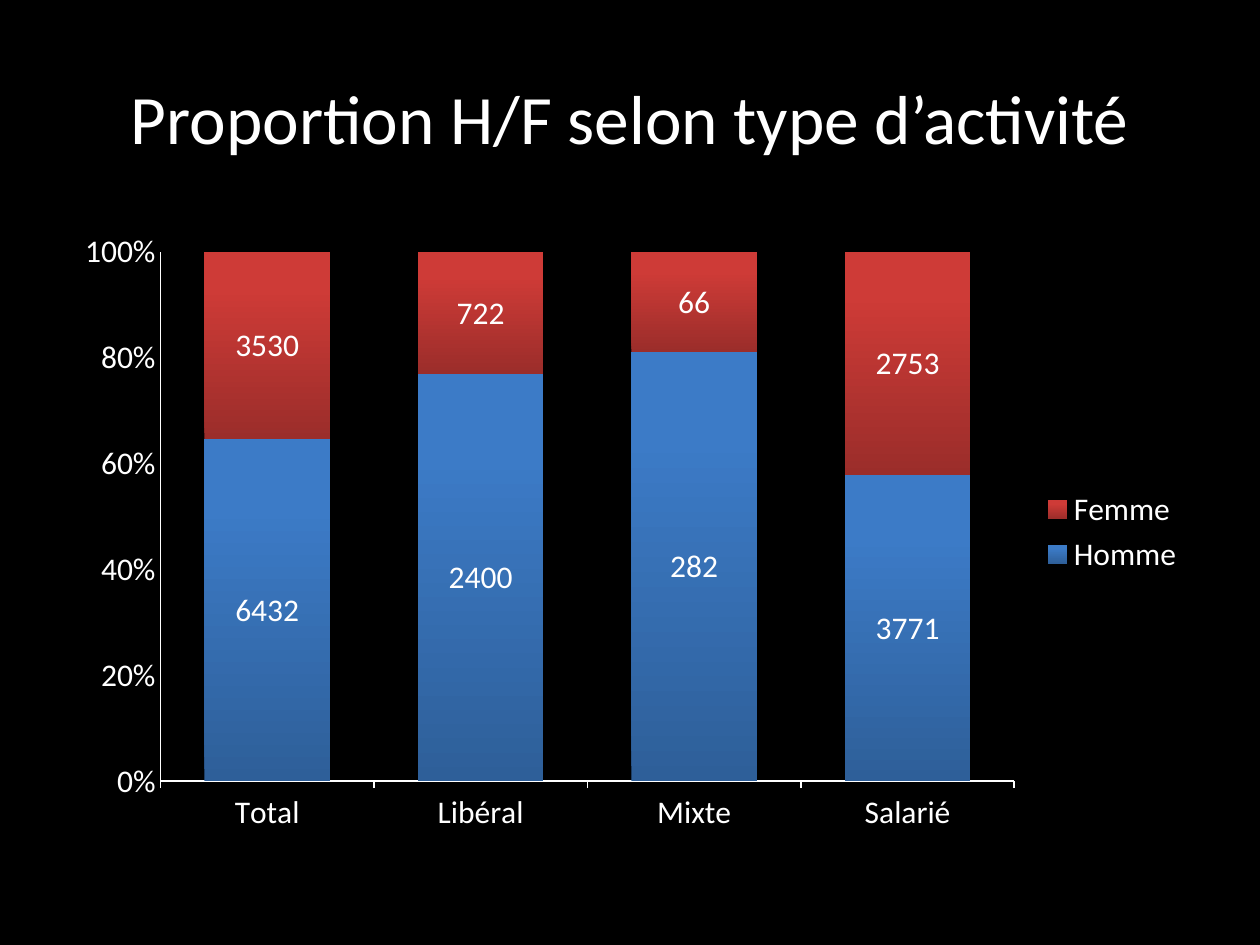
from lxml import etree
from pptx import Presentation
from pptx import util as u
from pptx.chart.data import CategoryChartData
from pptx.dml.color import RGBColor
from pptx.enum import chart as c, text
from pptx.oxml.ns import qn

# Content
TITLE = "Proportion H/F selon type d’activité"
CATEGORIES = ["Total", "Libéral", "Mixte", "Salarié"]
SERIES = [  # name, values, gradient from bottom to top
    ("Homme", (6432, 2400, 282, 3771), ("2E5F99", "3C7BC7")),
    ("Femme", (3530, 722, 66, 2753), ("9B2D2A", "CE3B37")),
]
FONT, WHITE, BLACK = "Calibri", "FFFFFF", "000000"

# Layout in px: left, top, width, height
SLIDE_SIZE = (1260, 945)
TITLE_BOX = (63, 38, 1134, 158)
CHART_BOX = (63, 220, 1134, 624)
PLOT_BOX = (161, 252, 854, 529)
PX_PER_INCH = 126


def px(length):
    return u.Inches(length / PX_PER_INCH)


def color(value):
    return RGBColor.from_string(value)


def set_values(target, **values):
    for name, value in values.items():
        setattr(target, name, value)


def style_font(font, size):
    set_values(font, name=FONT, size=u.Pt(size))
    font.color.rgb = color(WHITE)


def place_plot(chart):
    """Fix the inner plot area as fractions of the chart frame."""
    left, top, width, height = CHART_BOX
    x, y, w, h = PLOT_BOX
    values = {
        "layoutTarget": "inner", "xMode": "edge", "yMode": "edge",
        "x": round((x - left) / width, 3), "y": round((y - top) / height, 3),
        "w": round(w / width, 3), "h": round(h / height, 3),
    }
    plot_area = chart.plots[0]._element.getparent()
    for old in plot_area.findall(qn("c:layout")):
        plot_area.remove(old)
    layout = etree.Element(qn("c:layout"))
    manual = etree.SubElement(layout, qn("c:manualLayout"))
    for name, value in values.items():
        etree.SubElement(manual, qn("c:" + name)).set("val", str(value))
    plot_area.insert(0, layout)


def add_title(slide):
    frame = slide.shapes.add_textbox(*map(px, TITLE_BOX)).text_frame
    set_values(frame, word_wrap=True, vertical_anchor=text.MSO_ANCHOR.MIDDLE)
    paragraph = frame.paragraphs[0]
    set_values(paragraph, text=TITLE, alignment=text.PP_ALIGN.CENTER)
    style_font(paragraph.runs[0].font, 39.6)


def add_activity_chart(slide):
    data = CategoryChartData()
    data.categories = CATEGORIES
    for name, values, _ in SERIES:
        data.add_series(name, values)
    chart = slide.shapes.add_chart(
        c.XL_CHART_TYPE.COLUMN_STACKED_100, *map(px, CHART_BOX), data).chart
    set_values(chart, has_title=False, has_legend=True)
    style_font(chart.font, 18)
    set_values(chart.legend, include_in_layout=False,
               position=c.XL_LEGEND_POSITION.RIGHT)
    place_plot(chart)

    # Columns
    plot = chart.plots[0]
    set_values(plot, gap_width=70, overlap=100, vary_by_categories=False)
    for series, (_, _, gradient) in zip(plot.series, SERIES):
        fill = series.format.fill
        fill.gradient()
        fill.gradient_angle = 90
        for stop, value, position in zip(fill.gradient_stops, gradient, (0, 0.8)):
            stop.color.rgb = color(value)
            stop.position = position
        set_values(series.data_labels, show_value=True,
                   position=c.XL_LABEL_POSITION.CENTER)
        style_font(series.data_labels.font, 18)

    # Axes
    set_values(chart.value_axis, major_unit=0.2, minimum_scale=0, maximum_scale=1,
               has_major_gridlines=False, major_tick_mark=c.XL_TICK_MARK.NONE)
    set_values(chart.value_axis.tick_labels, number_format="0%",
               number_format_is_linked=False)
    chart.category_axis.major_tick_mark = c.XL_TICK_MARK.OUTSIDE
    for axis in (chart.category_axis, chart.value_axis):
        axis.format.line.color.rgb = color(WHITE)
        axis.format.line.width = u.Pt(1)


def main():
    presentation = Presentation()
    width, height = map(px, SLIDE_SIZE)
    set_values(presentation, slide_width=width, slide_height=height)
    slide = presentation.slides.add_slide(presentation.slide_layouts[6])
    slide.background.fill.solid()
    slide.background.fill.fore_color.rgb = color(BLACK)
    add_title(slide)
    add_activity_chart(slide)
    presentation.save("out.pptx")


if __name__ == "__main__":
    main()
